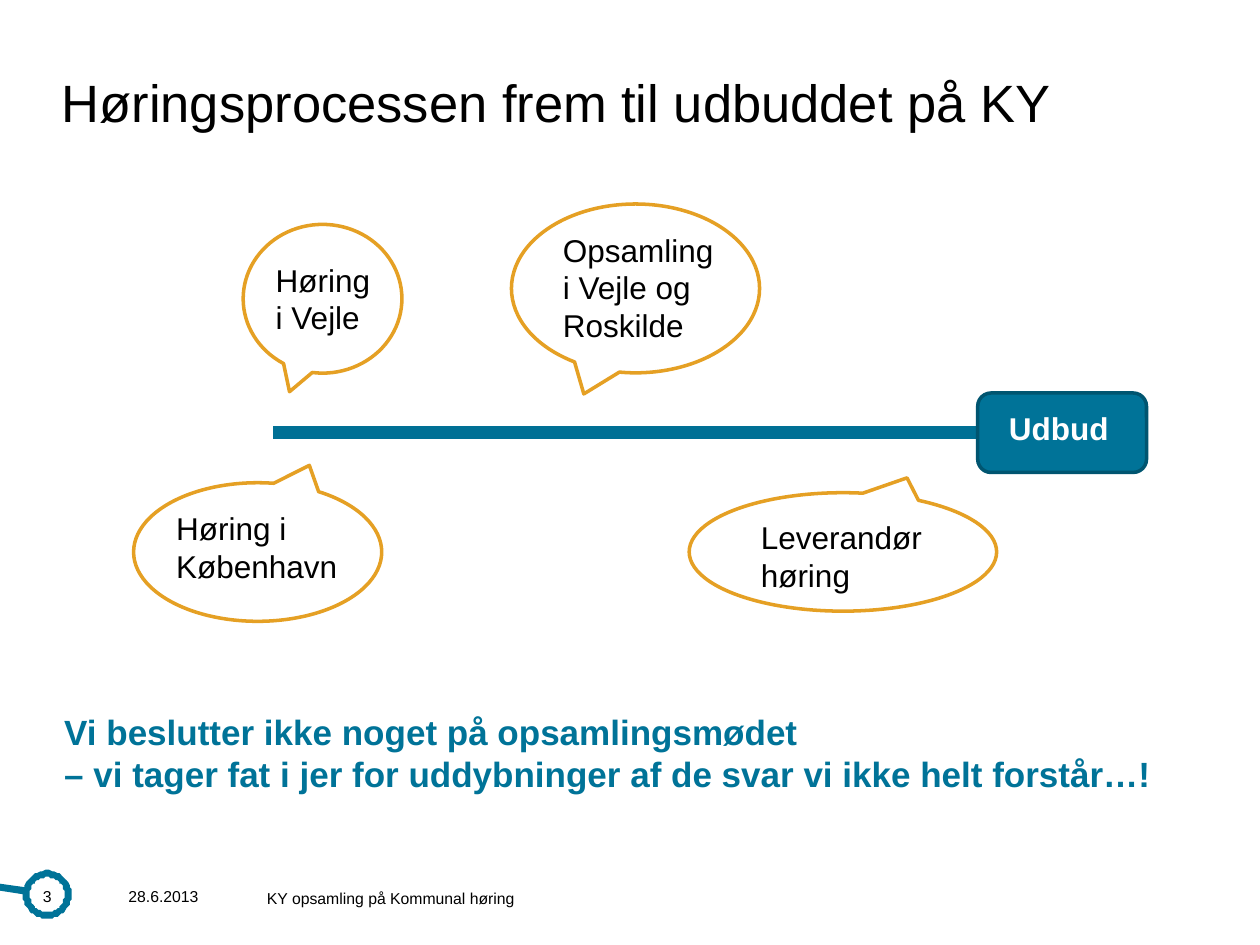
import math
import pptx
import pptx.util
import pptx.dml.color
import pptx.enum.shapes
import pptx.enum.text
import lxml.etree

Pt = pptx.util.Pt
SHAPE = pptx.enum.shapes.MSO_SHAPE
ANCHOR = pptx.enum.text.MSO_ANCHOR
ALIGN = pptx.enum.text.PP_ALIGN
TEAL, EDGE, GOLD = "007398", "005570", "E5A024"
BLACK, WHITE = "000000", "FFFFFF"

TITLE = "Høringsprocessen frem til udbuddet på KY"
# \v is a line break inside the paragraph
NOTE = ("Vi beslutter ikke noget på opsamlingsmødet\v"
        "– vi tager fat i jer for uddybninger af de svar vi ikke helt forstår…!")
FOOT = [
    ("28.6.2013", (73.4, 505.4, 65.5, 13.7), ALIGN.LEFT),
    ("KY opsamling på Kommunal høring", (152.6, 506.2, 228.2, 13.7), ALIGN.LEFT),
    ("3", (13, 505.4, 28, 13.7), ALIGN.CENTER),
]
# text, balloon box, turn, text box
STEPS = [
    ("Høring\ni Vejle", (139, 128.2, 90.7, 85), 0, (150.5, 145.4, 113, 51)),
    ("Høring i København", (76.3, 275.8, 141.8, 79.2), 180, (93.6, 287.3, 113, 51)),
    ("Opsamling\ni Vejle og Roskilde", (292.3, 116.6, 141.8, 96.5), 0,
     (314.6, 128.2, 113, 72.7)),
    ("Leverandørhøring", (393.8, 281.5, 175.7, 67.7), 180, (427.7, 292.3, 113, 51)),
]
GOAL = (558.7, 224.6, 96.5, 45.4)
START = 156.2
HUB, OUTER, INNER = (27, 511.2), 13.9, 9.9
TAIL = [(0, 504.7), (0, 509)]


def color(hexa):
    return pptx.dml.color.RGBColor.from_string(hexa)


def paint(shape, fill, line=None, width=2):
    shape.shadow.inherit = False
    shape.fill.solid()
    shape.fill.fore_color.rgb = color(fill)
    if line:
        shape.line.color.rgb = color(line)
        shape.line.width = Pt(width)
    else:
        shape.line.fill.background()


def write(text, box, size=18, ink=BLACK, bold=False, inset=(7.2, 3.6),
          align=ALIGN.LEFT, anchor=ANCHOR.TOP, lead=None):
    frame = slide.shapes.add_textbox(*map(Pt, box)).text_frame
    frame.word_wrap = True
    frame.vertical_anchor = anchor
    frame.margin_left = frame.margin_right = Pt(inset[0])
    frame.margin_top = frame.margin_bottom = Pt(inset[1])
    frame.text = text
    for para in frame.paragraphs:
        para.alignment = align
        if lead:
            para.line_spacing = Pt(lead)
        for run in para.runs:
            run.font.name = "Arial"
            run.font.size = Pt(size)
            run.font.bold = bold
            run.font.color.rgb = color(ink)


def arc(radius, first, last, step=6):
    """Points on a circle round the hub, angles in degrees."""
    return [(HUB[0] + radius * math.cos(math.radians(a)),
             HUB[1] + radius * math.sin(math.radians(a)))
            for a in range(first, last + 1, step)]


def ring():
    """Page number ring with a tail to the slide edge."""
    rim = arc(OUTER, 198, 540) + TAIL[::-1]
    hole = arc(INNER, 0, 354)
    pen = slide.shapes.build_freeform(*rim[0], scale=float(Pt(1)))
    pen.add_line_segments(rim[1:])
    pen.move_to(*hole[0])
    pen.add_line_segments(hole[1:])
    paint(pen.convert_to_shape(), TEAL)


deck = pptx.Presentation()
deck.slide_width, deck.slide_height = Pt(720), Pt(540)
slide = deck.slides.add_slide(deck.slide_layouts[6])

ring()
write(TITLE, (35.3, 38.2, 648, 56.9), size=30, inset=(0, 0), lead=38)
write(NOTE, (36.7, 406, 648, 85), size=20, ink=TEAL, bold=True,
      inset=(0, 0), lead=24)
for text, box, align in FOOT:
    write(text, box, size=9, inset=(0, 0), align=align, anchor=ANCHOR.MIDDLE)

for text, box, turn, area in STEPS:
    balloon = slide.shapes.add_shape(SHAPE.OVAL_CALLOUT, *map(Pt, box))
    balloon.rotation = turn
    paint(balloon, WHITE, GOLD)
for text, box, turn, area in STEPS:
    write(text, area)

mid = GOAL[1] + GOAL[3] / 2
axis = slide.shapes.add_connector(pptx.enum.shapes.MSO_CONNECTOR.STRAIGHT,
                                  Pt(START), Pt(mid), Pt(GOAL[0]), Pt(mid))
axis.line.color.rgb = color("007095")
axis.line.width = Pt(7.5)
lxml.etree.SubElement(axis.element.spPr, pptx.oxml.ns.qn("a:effectLst"))
goal = slide.shapes.add_shape(SHAPE.ROUNDED_RECTANGLE, *map(Pt, GOAL))
paint(goal, TEAL, EDGE)
axis.end_connect(goal, 1)
write("Udbud", (569.5, 230.4, 108, 28.8), ink=WHITE, bold=True)

deck.save("out.pptx")
